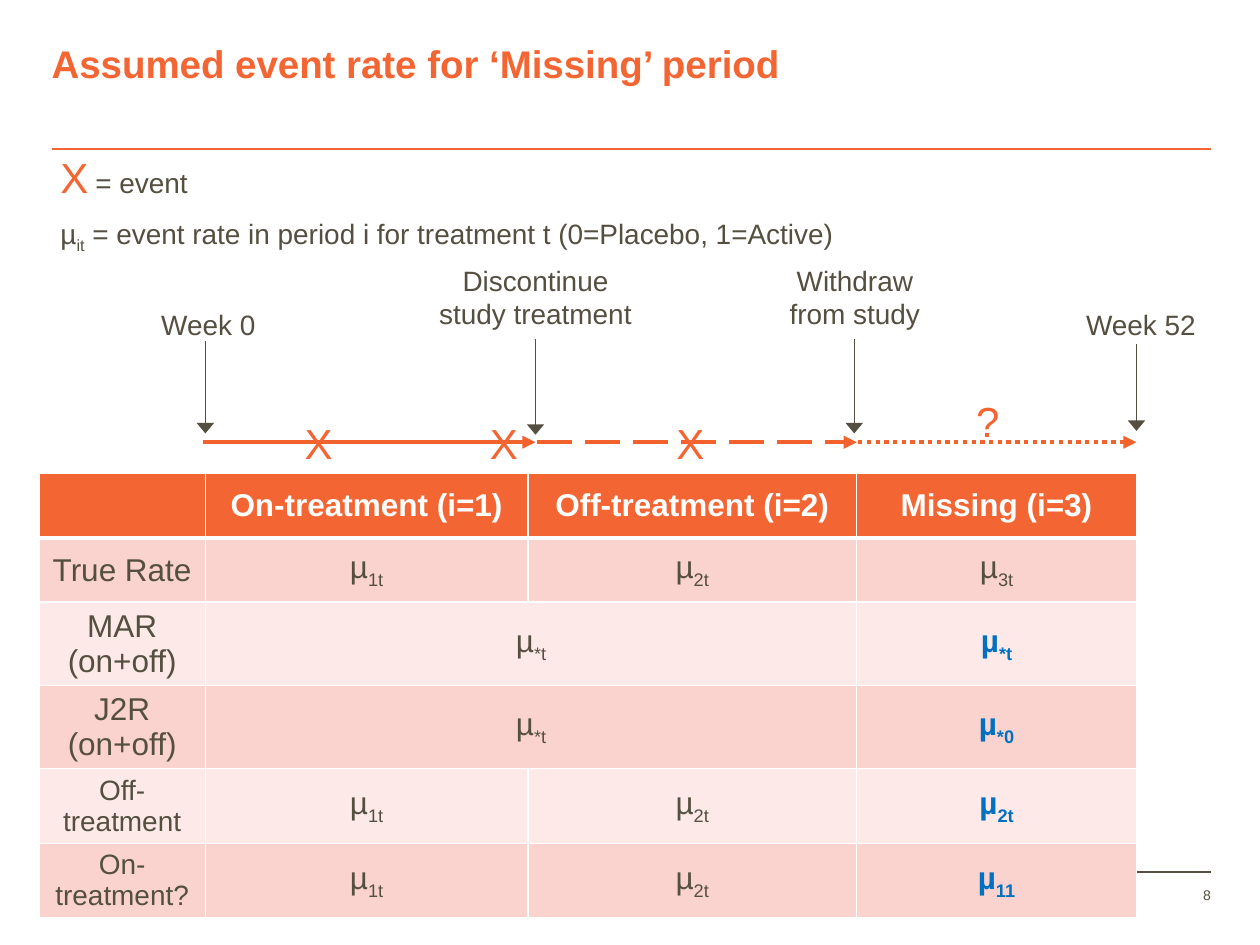
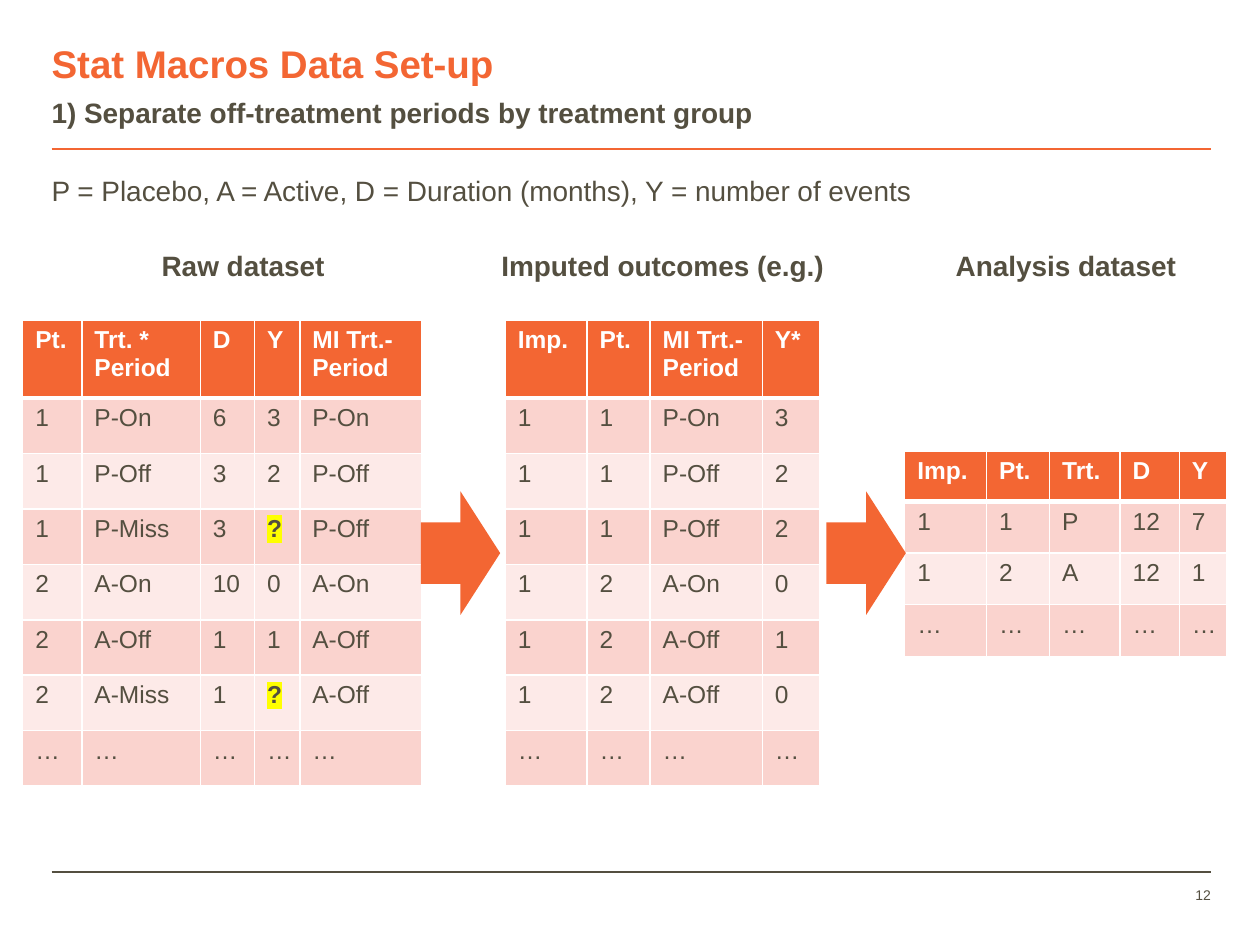
"""Build two slides on imputing event rates after treatment is discontinued."""
from lxml.etree import SubElement
from pptx import Presentation
from pptx.dml.color import RGBColor
from pptx.enum.dml import MSO_LINE
from pptx.enum.shapes import MSO_CONNECTOR, MSO_SHAPE
from pptx.enum.text import MSO_ANCHOR, PP_ALIGN
from pptx.oxml import parse_xml
from pptx.oxml.ns import nsdecls, qn
from pptx.util import Inches, Pt

ORANGE = RGBColor(0xF3, 0x66, 0x33)
TIMELINE_ORANGE = RGBColor(0xF2, 0x62, 0x2D)
DARK = RGBColor(0x54, 0x4F, 0x40)
BLUE = RGBColor(0x00, 0x70, 0xC0)
WHITE = RGBColor(0xFF, 0xFF, 0xFF)
YELLOW = RGBColor(0xFF, 0xFF, 0x00)
BANDS = RGBColor(0xFA, 0xD3, 0xCE), RGBColor(0xFD, 0xEA, 0xE8)

FONT = "Arial"
LEFT, RIGHT = 0.41, 9.61
CENTER, MIDDLE = PP_ALIGN.CENTER, MSO_ANCHOR.MIDDLE


def rate(index, **style):
    return [("µ", style), (index, dict(style, sub=True))]


def imputed(index):
    return rate(index, bold=True, color=BLUE)


def small(label):
    return [(label, {"size": 16})]


RATES = [
    ["", "On-treatment (i=1)", "Off-treatment (i=2)", "Missing (i=3)"],
    ["True Rate", rate("1t"), rate("2t"), rate("3t")],
    ["MAR (on+off)", rate("*t"), None, imputed("*t")],
    ["J2R (on+off)", rate("*t"), None, imputed("*0")],
    [small("Off-treatment"), rate("1t"), rate("2t"), imputed("2t")],
    [small("On-treatment?"), rate("1t"), rate("2t"), imputed("11")],
]
RATES_AT = 0.31, 3.76
RATE_COLUMNS = [1.32, 2.56, 2.61, 2.22]
RATE_ROWS = [0.51, 0.51, 0.66, 0.66, 0.59, 0.59]

LEGEND = [
    ((0.48, 1.15, 4.6, 0.51),
     [("X", {"size": 24, "color": ORANGE}), (" ", {"size": 14}), ("= event", {})]),
    ((0.48, 1.72, 7.09, 0.33),
     rate("it") + [(" = event rate in period i for treatment t (0=Placebo, 1=Active)", {})]),
]
MILESTONES = [
    ("Week 0", (1.28, 2.44, 1, 0.27), PP_ALIGN.LEFT, 1.63, 2.71, 3.44),
    ("Discontinue study treatment", (3.42, 2.01, 1.66, 0.69), CENTER, 4.25, 2.69, 3.45),
    ("Withdraw from study", (6.2, 2.01, 1.17, 0.69), CENTER, 6.78, 2.69, 3.44),
    ("Week 52", (8.62, 2.44, 1, 0.27), PP_ALIGN.LEFT, 9.02, 2.73, 3.42),
]
TIMELINE_Y = 3.51
PERIODS = [(1.61, 4.25, None), (6.81, 9.02, MSO_LINE.ROUND_DOT), (4.26, 6.8, MSO_LINE.LONG_DASH)]
EVENTS = [("X", 2.41, 3.29), ("X", 3.88, 3.29), ("X", 5.36, 3.29), ("?", 7.72, 3.11)]

UNKNOWN = [("?", {"bold": True, "highlight": YELLOW})]
DATASETS = [
    {"title": "Raw dataset", "middle": 1.93, "at": (0.18, 2.54),
     "columns": [0.47, 0.94, 0.43, 0.36, 0.97], "heights": (0.62, 0.44),
     "rows": [
         ["Pt.", "Trt. *\nPeriod", "D", "Y", "MI Trt.-\nPeriod"],
         ["1", "P-On", "6", "3", "P-On"],
         ["1", "P-Off", "3", "2", "P-Off"],
         ["1", "P-Miss", "3", UNKNOWN, "P-Off"],
         ["2", "A-On", "10", "0", "A-On"],
         ["2", "A-Off", "1", "1", "A-Off"],
         ["2", "A-Miss", "1", UNKNOWN, "A-Off"],
         ["…"] * 5]},
    {"title": "Imputed outcomes (e.g.)", "middle": 5.26, "at": (4.01, 2.54),
     "columns": [0.65, 0.5, 0.89, 0.46], "heights": (0.62, 0.44),
     "rows": [
         ["Imp.", "Pt.", "MI Trt.-\nPeriod", "Y*"],
         ["1", "1", "P-On", "3"],
         ["1", "1", "P-Off", "2"],
         ["1", "1", "P-Off", "2"],
         ["1", "2", "A-On", "0"],
         ["1", "2", "A-Off", "1"],
         ["1", "2", "A-Off", "0"],
         ["…"] * 4]},
    {"title": "Analysis dataset", "middle": 8.46, "at": (7.18, 3.58),
     "columns": [0.65, 0.5, 0.56, 0.47, 0.38], "heights": (0.4, 0.41),
     "rows": [
         ["Imp.", "Pt.", "Trt.", "D", "Y"],
         ["1", "1", "P", "12", "7"],
         ["1", "2", "A", "12", "1"],
         ["…"] * 5]},
]
STEP_ARROWS = [3.34, 6.56]


def style_run(run, size=16, color=DARK, bold=False, sub=False, highlight=None):
    run.font.name, run.font.size, run.font.bold = FONT, Pt(size), bold
    run.font.color.rgb = color
    properties = run._r.get_or_add_rPr()
    if sub:
        properties.set("baseline", "-25000")
    if highlight:
        properties.find(qn("a:solidFill")).addnext(parse_xml(
            f'<a:highlight {nsdecls("a")}><a:srgbClr val="{highlight}"/></a:highlight>'))


def write(frame, text, align=PP_ALIGN.LEFT, **style):
    lines = [[(line, {})] for line in text.split("\n")] if isinstance(text, str) else [text]
    for number, line in enumerate(lines):
        paragraph = frame.add_paragraph() if number else frame.paragraphs[0]
        paragraph.alignment = align
        for words, changes in line:
            run = paragraph.add_run()
            run.text = words
            style_run(run, **{**style, **changes})


def add_label(slide, at, text, anchor=MSO_ANCHOR.TOP, **style):
    frame = slide.shapes.add_textbox(*map(Inches, at)).text_frame
    frame.word_wrap = True
    frame.vertical_anchor = anchor
    frame.margin_left = frame.margin_right = frame.margin_top = frame.margin_bottom = 0
    write(frame, text, **style)


def add_line(slide, start, end, color, width, dash=None, head=None):
    line = slide.shapes.add_connector(MSO_CONNECTOR.STRAIGHT, *map(Inches, start + end))
    line.line.color.rgb, line.line.width = color, Pt(width)
    if dash:
        line.line.dash_style = dash
    if head:
        SubElement(line.line._get_or_add_ln(), qn("a:tailEnd"), type="triangle", w=head, len="med")
    SubElement(line._element.spPr, qn("a:effectLst"))


def paint_cell(cell, row):
    cell.fill.solid()
    cell.fill.fore_color.rgb = BANDS[(row - 1) % 2] if row else ORANGE
    widths = {"L": 1, "R": 1, "T": 3 if row == 1 else 1, "B": 1 if row else 3}
    for place, (side, width) in enumerate(widths.items()):
        cell._tc.get_or_add_tcPr().insert(place, parse_xml(
            f'<a:ln{side} {nsdecls("a")} w="{Pt(width)}"><a:solidFill>'
            f'<a:srgbClr val="{WHITE}"/></a:solidFill></a:ln{side}>'))


def add_grid(slide, at, columns, heights, rows, size,
             anchor=MSO_ANCHOR.TOP, align=PP_ALIGN.LEFT, padding=0.05):
    extent = sum(columns), sum(heights)
    table = slide.shapes.add_table(len(rows), len(columns), *map(Inches, at + extent)).table
    for column, width in zip(table.columns, columns):
        column.width = Inches(width)
    for r, (values, height) in enumerate(zip(rows, heights)):
        table.rows[r].height = Inches(height)
        for c, value in enumerate(values):
            cell = table.cell(r, c)
            paint_cell(cell, r)
            cell.vertical_anchor = anchor
            cell.margin_top = cell.margin_bottom = Inches(padding)
            if value is None:
                table.cell(r, c - 1).merge(cell)
            elif value:
                write(cell.text_frame, value, align=align, size=size,
                      color=DARK if r else WHITE, bold=r == 0)


def add_page(deck, title, number):
    slide = deck.slides.add_slide(deck.slide_layouts[6])
    for y, color in ((6.92, DARK), (1.18, ORANGE)):
        add_line(slide, (LEFT, y), (RIGHT, y), color, 1)
    add_label(slide, (LEFT, 0.32, 8.28, 0.37), title, size=22, color=ORANGE, bold=True)
    add_label(slide, (8.7, 7.04, 0.91, 0.4), number, size=8, align=PP_ALIGN.RIGHT)
    return slide


def build_event_rates(deck):
    slide = add_page(deck, "Assumed event rate for ‘Missing’ period", "8")
    for at, text in LEGEND:
        add_label(slide, at, text, anchor=MIDDLE if at[1] < 1.5 else MSO_ANCHOR.TOP)
    add_grid(slide, RATES_AT, RATE_COLUMNS, RATE_ROWS, RATES, 18, MIDDLE, CENTER, padding=0.03)
    for start, end, dash in PERIODS:
        add_line(slide, (start, TIMELINE_Y), (end, TIMELINE_Y), TIMELINE_ORANGE, 2.5, dash, "med")
    for mark, x, y in EVENTS:
        add_label(slide, (x, y, 0.24, 0.45), mark, MIDDLE, align=CENTER, size=24, color=ORANGE)
    for name, at, align, x, top, bottom in MILESTONES:
        add_label(slide, at, name, MIDDLE, align=align)
        add_line(slide, (x, top), (x, bottom), DARK, 0.75, head="lg")


def build_data_setup(deck):
    slide = add_page(deck, "Stat Macros Data Set-up", "12")
    add_label(slide, (LEFT, 0.76, 8.3, 0.26),
              "1) Separate off-treatment periods by treatment group", bold=True)
    add_label(slide, (LEFT, 1.37, 9.24, 0.27),
              "P = Placebo, A = Active, D = Duration (months), Y = number of events",
              MSO_ANCHOR.BOTTOM)
    for dataset in DATASETS:
        add_label(slide, (dataset["middle"] - 1.4, 1.97, 2.8, 0.36), dataset["title"],
                  align=CENTER, bold=True)
        header, body = dataset["heights"]
        heights = [header] + [body] * (len(dataset["rows"]) - 1)
        add_grid(slide, dataset["at"], dataset["columns"], heights, dataset["rows"], 14)
    for x in STEP_ARROWS:
        arrow = slide.shapes.add_shape(MSO_SHAPE.RIGHT_ARROW, *map(Inches, (x, 3.9, 0.63, 0.98)))
        arrow.shadow.inherit = False
        arrow.fill.solid()
        arrow.fill.fore_color.rgb = ORANGE
        arrow.line.fill.background()


def main():
    deck = Presentation()
    deck.slide_width, deck.slide_height = Inches(10), Inches(7.5)
    build_event_rates(deck)
    build_data_setup(deck)
    deck.save("out.pptx")


if __name__ == "__main__":
    main()
